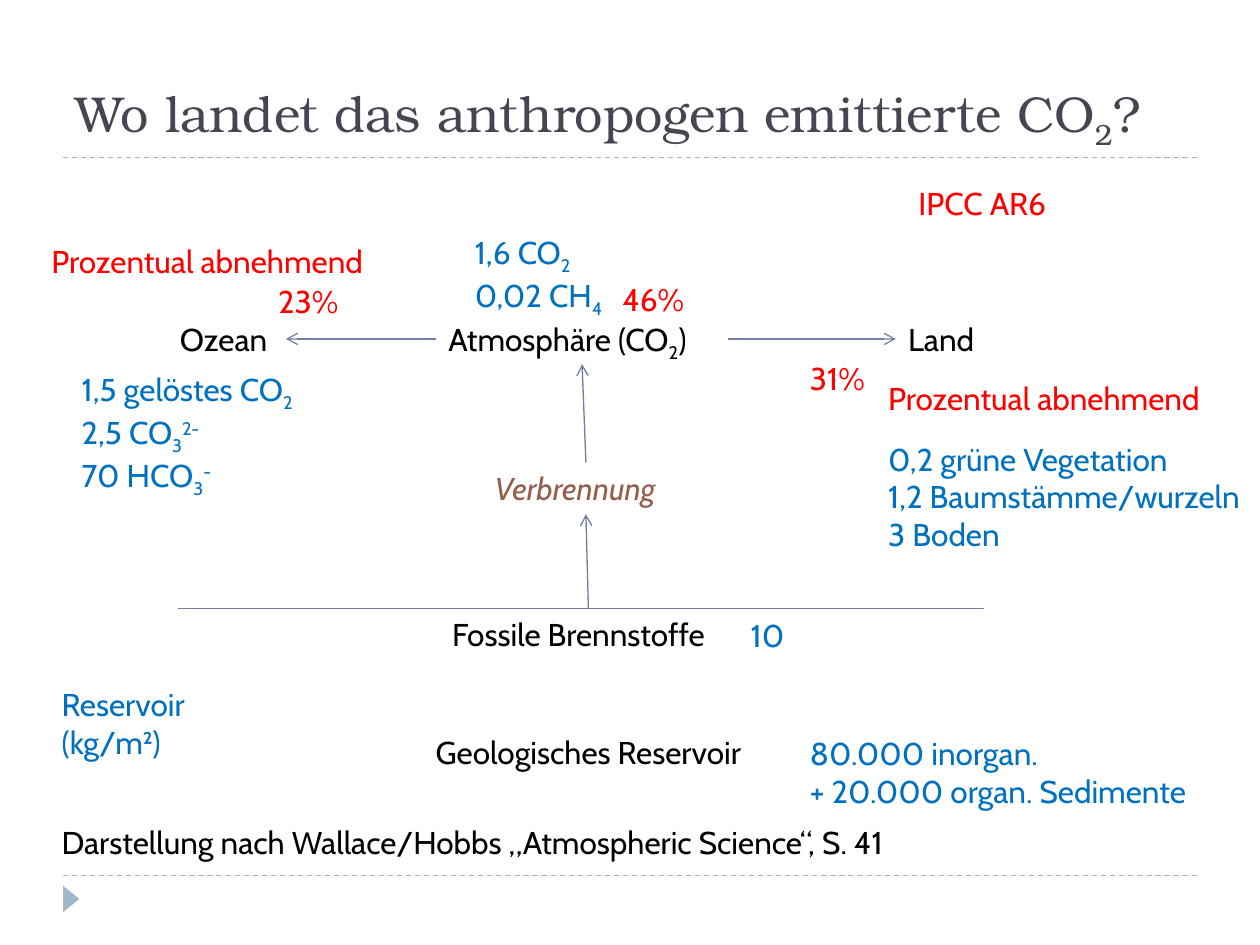
from lxml import etree
from pptx import Presentation
from pptx.dml import color
from pptx.enum import dml, shapes, text
from pptx.oxml import ns
from pptx.util import Inches, Pt

COLORS = {
    "title": "464653", "text": "000000", "share": "FF0000", "stock": "0070C0",
    "burning": "955E4B", "arrow": "727CA3", "rule": "9FB8CD",
}
BODY_FONT, TITLE_FONT = "Cabin", "TeX Gyre Bonum"
SUB, SUP = -25000, 30000
TWO, THREE, FOUR = ("2", SUB), ("3", SUB), ("4", SUB)
BREAK = "\n"


def rgb(name):
    """Return the named colour."""
    return color.RGBColor.from_string(COLORS[name])


def add_runs(p, runs, size, font, tone, italic):
    """Fill a paragraph with plain strings and (text, baseline) pairs."""
    for item in runs:
        if item == BREAK:
            p.add_line_break()
            continue
        content, baseline = item if isinstance(item, tuple) else (item, 0)
        r = p.add_run()
        r.text = content
        r.font.size, r.font.name, r.font.italic = Pt(size), font, italic
        r.font.color.rgb = rgb(tone)
        if baseline:
            r.font._element.set("baseline", str(baseline))


def add_label(s, box, lines, tone="text", wrap=False, italic=None):
    """Add a body text box with one paragraph per list of runs."""
    tf = s.shapes.add_textbox(*map(Inches, box)).text_frame
    tf.word_wrap = wrap
    tf.auto_size = text.MSO_AUTO_SIZE.SHAPE_TO_FIT_TEXT
    for i, runs in enumerate(lines):
        p = tf.add_paragraph() if i else tf.paragraphs[0]
        add_runs(p, runs, 18, BODY_FONT, tone, italic)


def add_title(s, runs):
    """Add the bottom-anchored heading."""
    tf = s.shapes.add_textbox(Inches(0.5), Inches(0.25), Inches(9), Inches(1)).text_frame
    tf.word_wrap = True
    tf.vertical_anchor = text.MSO_ANCHOR.BOTTOM
    add_runs(tf.paragraphs[0], runs, 28.8, TITLE_FONT, "title", None)


def add_line(s, start, end, tone="arrow", dashed=False, head=False):
    """Add a thin straight line, optionally dashed or with an arrowhead."""
    sp = s.shapes.add_connector(shapes.MSO_CONNECTOR.STRAIGHT, *map(Inches, start + end))
    sp.line.color.rgb = rgb(tone)
    sp.line.width = Pt(0.75)
    if dashed:
        sp.line.dash_style = dml.MSO_LINE.DASH
    if head:
        etree.SubElement(sp.line._get_or_add_ln(), ns.qn("a:tailEnd"), type="arrow")
    etree.SubElement(sp._element.spPr, ns.qn("a:effectLst"))


def add_marker(s):
    """Add the small triangle in the footer."""
    sp = s.shapes.add_shape(shapes.MSO_SHAPE.ISOSCELES_TRIANGLE,
                            Inches(0.46), Inches(7.07), Inches(0.21), Inches(0.13))
    sp.rotation = 90
    sp.shadow.inherit = False
    sp.fill.solid()
    sp.fill.fore_color.rgb = rgb("rule")
    sp.line.fill.background()


def add_frame(s):
    """Add the dashed rules, the footer marker and the heading."""
    for y in (6.95, 1.25):
        add_line(s, (0.5, y), (9.5, y), "rule", dashed=True)
    add_marker(s)
    add_title(s, ["Wo landet das anthropogen emittierte CO", TWO, "?"])


def add_stations(s):
    """Add the names of the carbon stores and the source line."""
    add_label(s, (3.36, 5.77, 2.88, 0.4), [["Geologisches Reservoir"]])
    add_label(s, (3.49, 4.83, 2.36, 0.4), [["Fossile Brennstoffe"]])
    add_label(s, (3.83, 3.67, 1.65, 0.4), [["Verbrennung"]], "burning", italic=True)
    add_label(s, (3.46, 2.49, 2.32, 0.4), [["Atmosphäre (CO", TWO, ")"]])
    add_label(s, (7.11, 2.49, 0.76, 0.4), [["Land"]])
    add_label(s, (1.33, 2.49, 0.95, 0.4), [["Ozean"]])
    add_label(s, (0.39, 6.48, 7.13, 0.4),
              [["Darstellung nach Wallace/Hobbs „Atmospheric Science“, S. 41"]])


def add_flows(s):
    """Add the ground line and the arrows between the stores."""
    add_line(s, (1.41, 4.83), (7.81, 4.83))
    for start, end in (((4.67, 4.83), (4.65, 4.08)), ((4.65, 3.67), (4.62, 2.89)),
                       ((5.78, 2.69), (7.11, 2.69)), ((3.46, 2.69), (2.27, 2.69))):
        add_line(s, start, end, head=True)


def add_shares(s):
    """Add the red percentages, trends and their reference."""
    for x, y, share in ((2.11, 2.19, "23%"), (6.33, 2.8, "31%"), (4.84, 2.17, "46%")):
        add_label(s, (x, y, 0.71, 0.4), [[share]], "share")
    for x, y in ((6.95, 2.96), (0.31, 1.87)):
        add_label(s, (x, y, 2.81, 0.4), [["Prozentual abnehmend"]], "share", wrap=True)
    add_label(s, (7.19, 1.41, 1.35, 0.4), [["IPCC AR6"]], "share")


def add_stocks(s):
    """Add the blue reservoir sizes and their unit."""
    for box, lines in (
        ((6.33, 5.78, 3.25, 0.71), [["80.000 inorgan."], ["+ 20.000 organ. Sedimente"]]),
        ((3.67, 1.8, 1.22, 0.71), [["1,6 CO", TWO], ["0,02 CH", FOUR]]),
        ((0.55, 2.89, 2.1, 1.01), [["1,5 gelöstes CO", TWO],
                                   ["2,5 CO", THREE, ("2-", SUP)],
                                   ["70 HCO", THREE, ("-", SUP)]]),
        ((5.86, 4.84, 0.48, 0.4), [["10"]]),
        ((6.95, 3.44, 3.12, 1.01), [["0,2 grüne Vegetation"], ["1,2 Baumstämme/wurzeln"],
                                    ["3 Boden"]]),
        ((0.39, 5.39, 1.28, 0.71), [["Reservoir", BREAK, "(kg/m²)"]]),
    ):
        add_label(s, box, lines, "stock")


def main():
    """Build the slide on the fate of emitted carbon dioxide."""
    prs = Presentation()
    prs.slide_width, prs.slide_height = Inches(10), Inches(7.5)
    s = prs.slides.add_slide(prs.slide_layouts[6])
    for add_part in (add_frame, add_stations, add_flows, add_shares, add_stocks):
        add_part(s)
    prs.save("out.pptx")


if __name__ == "__main__":
    main()
